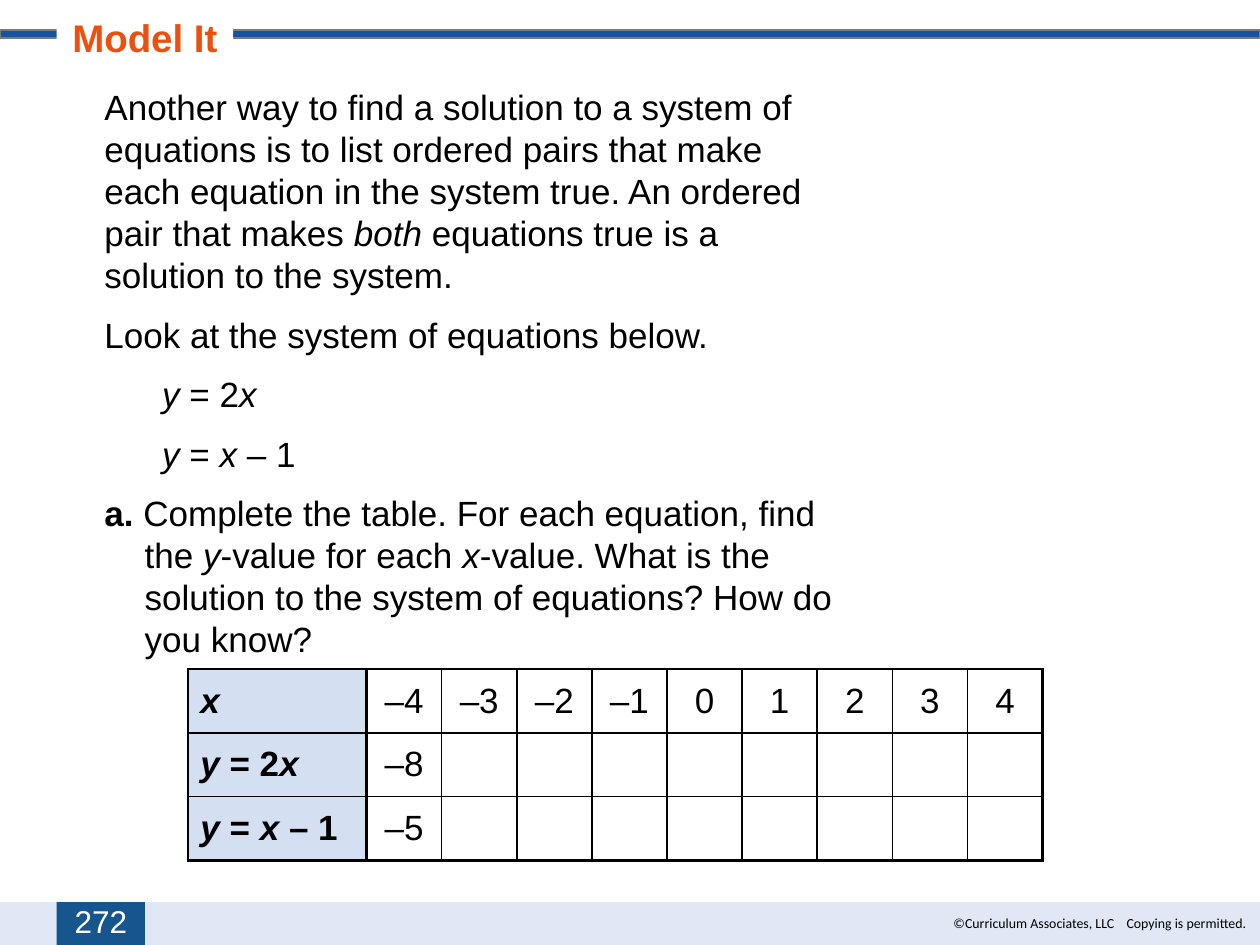
from lxml.etree import SubElement
from pptx import Presentation
from pptx.dml.color import RGBColor
from pptx.enum.shapes import MSO_SHAPE
from pptx.enum.text import MSO_ANCHOR, PP_ALIGN
from pptx.oxml.ns import qn
from pptx.util import Pt

COLORS = {
    "text": "000000", "white": "FFFFFF", "title": "EC500E", "bar": "16529D",
    "bar_line": "7B7B7B", "footer": "E1E8F5", "number": "17558E", "head": "D4DFF2",
}
ROWS = [
    ["*x*", "–4", "–3", "–2", "–1", "0", "1", "2", "3", "4"],
    ["*y* = 2*x*", "–8"] + [""] * 8,
    ["*y* = *x* – 1", "–5"] + [""] * 8,
]


def color(name):
    return RGBColor.from_string(COLORS[name])


def set_font(p, size, name="text", bold=False, face="Arial"):
    p.font.size = Pt(size)
    p.font.name = face
    p.font.bold = bold
    p.font.color.rgb = color(name)


def add_runs(p, text, bold=None):
    """Add text in which * switches italic on and off and a newline breaks the line."""
    for i, part in enumerate(text.split("*")):
        for j, line in enumerate(part.split("\n")):
            if j:
                p.add_line_break()
            if line:
                r = p.add_run()
                r.text = line
                r.font.bold = bold
                if i % 2:
                    r.font.italic = True


def set_indent(p, left, first=0):
    pPr = p._p.get_or_add_pPr()
    pPr.set("marL", str(Pt(left)))
    pPr.set("indent", str(Pt(first)))


def add_box(s, x, y, w, h, fill):
    sp = s.shapes.add_shape(MSO_SHAPE.RECTANGLE, Pt(x), Pt(y), Pt(w), Pt(h))
    sp.shadow.inherit = False
    sp.fill.solid()
    sp.fill.fore_color.rgb = color(fill)
    sp.line.fill.background()
    return sp


def add_text(s, x, y, w, h):
    tf = s.shapes.add_textbox(Pt(x), Pt(y), Pt(w), Pt(h)).text_frame
    tf.word_wrap = True
    return tf


def add_header(s, x, y, w, h):
    bar = add_box(s, x, y + 10, w, 4.5, "bar")
    bar.line.color.rgb = color("bar_line")
    bar.line.width = Pt(1)

    title = s.shapes.title
    title.element.getparent().append(title.element)  # in front of the bar
    title.left, title.top, title.width, title.height = Pt(x + 32.4), Pt(y), Pt(100.8), Pt(h)
    title.fill.solid()
    title.fill.fore_color.rgb = color("white")
    tf = title.text_frame
    tf.vertical_anchor = MSO_ANCHOR.TOP
    tf.text = "Model It"
    p = tf.paragraphs[0]
    p.alignment = PP_ALIGN.CENTER
    p.line_spacing = 0.9
    set_font(p, 22, "title", bold=True)


def add_body(s, x, y, w, h):
    tf = add_text(s, x, y, w, h)
    texts = [
        ("Another way to find a solution to a system of equations is to list ordered "
         "pairs that make\neach equation in the system true. An ordered\npair that makes "
         "*both* equations true is a\nsolution to the system.", 0),
        ("Look at the system of equations below.", 0),
        ("*y* = 2*x*", 33),
        ("*y* = *x* – 1", 33),
    ]
    for i, (text, left) in enumerate(texts):
        p = tf.add_paragraph() if i else tf.paragraphs[0]
        set_indent(p, left)
        add_runs(p, text)
    p = tf.add_paragraph()
    set_indent(p, 23, -23)
    add_runs(p, "a. ", bold=True)
    add_runs(p, "Complete the table. For each equation, find the *y*-value for each "
                "*x*-value. What is the solution to the system of equations? "
                "How do you know?")
    for i, p in enumerate(tf.paragraphs):
        p.line_spacing = Pt(24)
        if i:
            p.space_before = Pt(10)
        set_font(p, 20)


def set_borders(cell, widths):
    tcPr = cell._tc.get_or_add_tcPr()
    for side, width in zip("LRTB", widths):
        ln = SubElement(tcPr, qn(f"a:ln{side}"), w=str(Pt(width)))
        fill = SubElement(ln, qn("a:solidFill"))
        SubElement(fill, qn("a:srgbClr"), val=COLORS["text"])


def add_value_table(s, x, y, w, h, head_w=102.2):
    """Add the table of values: thick outer frame, thick line after the first column."""
    n_rows, n_cols = len(ROWS), len(ROWS[0])
    table = s.shapes.add_table(n_rows, n_cols, Pt(x), Pt(y), Pt(w), Pt(h)).table
    for c, col in enumerate(table.columns):
        col.width = Pt((w - head_w) / (n_cols - 1) if c else head_w)
    for r, row in enumerate(ROWS):
        table.rows[r].height = Pt(h / n_rows)
        for c, text in enumerate(row):
            cell = table.cell(r, c)
            thick = (c < 2, c in (0, n_cols - 1), r == 0, r == n_rows - 1)
            set_borders(cell, [1.5 if t else 1 for t in thick])
            cell.fill.solid()
            cell.fill.fore_color.rgb = color("white" if c else "head")
            cell.vertical_anchor = MSO_ANCHOR.MIDDLE
            p = cell.text_frame.paragraphs[0]
            p.alignment = PP_ALIGN.CENTER if c else PP_ALIGN.LEFT
            add_runs(p, text, bold=c == 0)
            set_font(p, 20, bold=c == 0)


def add_footer(s, x, y, w, h):
    add_box(s, x, y, w, h, "footer")
    tf = add_text(s, x + w - 182.2, y + 3.6, 182.2, 16.6)
    tf.margin_right = 0
    p = tf.paragraphs[0]
    tabs = SubElement(p._p.get_or_add_pPr(), qn("a:tabLst"))
    SubElement(tabs, qn("a:tab"), pos=str(Pt(98.9)), algn="l")
    add_runs(p, "©Curriculum Associates, LLC\tCopying is permitted.")
    set_font(p, 7.9, face="Calibri")

    tf = add_box(s, x + 32.4, y, 50.4, h, "number").text_frame
    tf.margin_top = tf.margin_bottom = 0
    tf.vertical_anchor = MSO_ANCHOR.MIDDLE
    tf.text = "272"
    p = tf.paragraphs[0]
    p.alignment = PP_ALIGN.CENTER
    p.line_spacing = 0.9
    set_font(p, 18, "white")


def main():
    prs = Presentation()
    prs.slide_width, prs.slide_height = Pt(720), Pt(540)
    s = prs.slides.add_slide(prs.slide_layouts[5])
    add_header(s, 0, 7.2, 720, 31)
    add_body(s, 52.6, 45.4, 432, 335)
    add_value_table(s, 107.3, 382.3, 488.6, 109.4)
    add_footer(s, 0, 515.5, 720, 24.5)
    prs.save("out.pptx")


if __name__ == "__main__":
    main()
